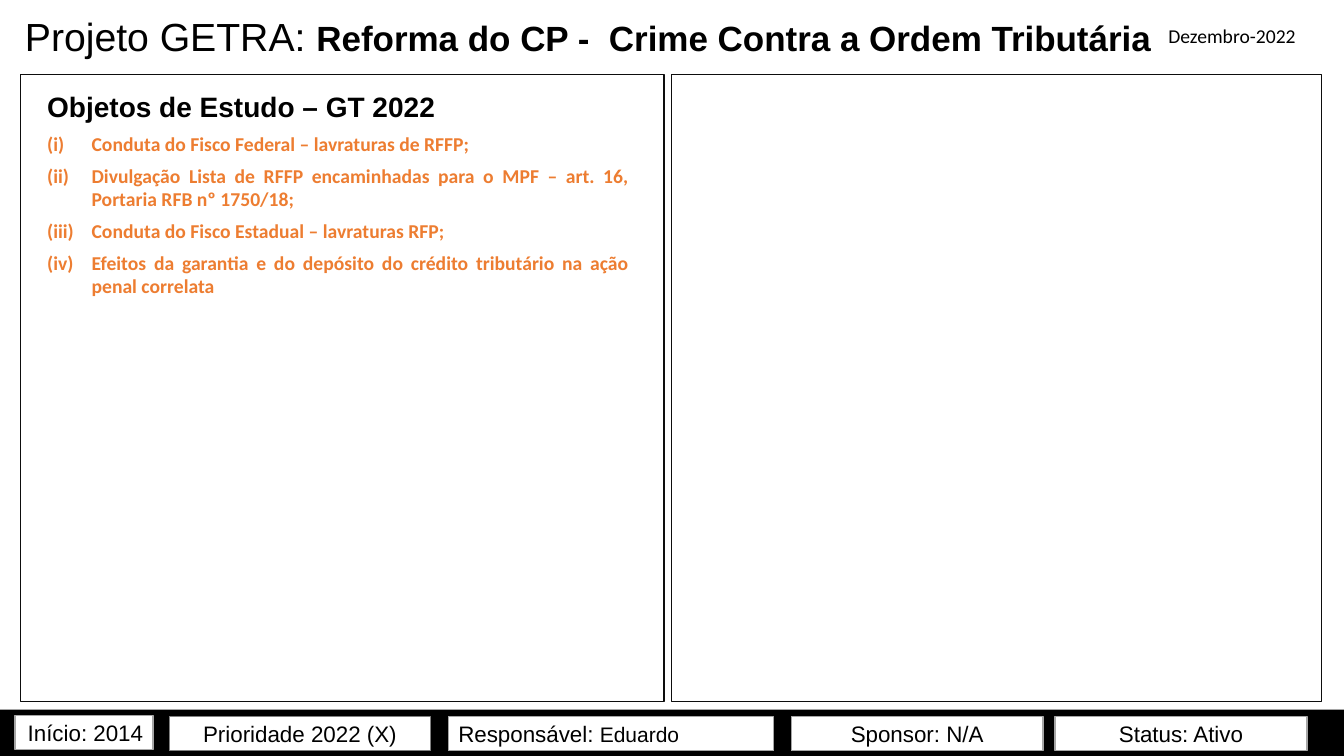
from dataclasses import dataclass

from lxml import etree
from pptx import Presentation
from pptx.dml.color import RGBColor
from pptx.enum.shapes import MSO_SHAPE
from pptx.enum.text import MSO_ANCHOR, PP_ALIGN
from pptx.oxml.ns import qn
from pptx.util import Cm, Length, Pt

RECT = MSO_SHAPE.RECTANGLE
TOP, MIDDLE, BOTTOM = MSO_ANCHOR.TOP, MSO_ANCHOR.MIDDLE, MSO_ANCHOR.BOTTOM
LEFT, CENTER, RIGHT = PP_ALIGN.LEFT, PP_ALIGN.CENTER, PP_ALIGN.RIGHT
JUSTIFY = PP_ALIGN.JUSTIFY


@dataclass(frozen=True)
class Theme:
    black: str = "000000"
    white: str = "FFFFFF"
    frame: str = "0D0D0D"
    dark: str = "808080"
    light: str = "A6A6A6"
    orange: str = "ED7D31"
    sans: str = "Arial"
    body: str = "Calibri"
    title: int = 28
    topic: int = 25
    head: int = 20
    label: int = 16
    name: int = 15
    text: int = 14


THEME = Theme()


@dataclass(frozen=True)
class Box:
    left: float
    top: float
    width: float
    height: float

    def spans(self) -> tuple[Length, ...]:
        return Cm(self.left), Cm(self.top), Cm(self.width), Cm(self.height)


@dataclass(frozen=True)
class Label:
    text: str
    left: float
    width: float
    top: float = 18.06
    line: str = THEME.light
    align: PP_ALIGN = CENTER
    name: str = ""


PANELS = (Box(0.51, 1.88, 16.23, 15.8), Box(16.92, 1.88, 16.38, 15.8))
AREAS = (Box(0.94, 2.13, 15.16, 14.83), Box(17.35, 2.08, 15.16, 14.83))
TOPICS = (
    "Conduta do Fisco Federal – lavraturas de RFFP;",
    "Divulgação Lista de RFFP encaminhadas para o MPF – art. 16, Portaria RFB nº 1750/18;",
    "Conduta do Fisco Estadual – lavraturas RFP;",
    "Efeitos da garantia e do depósito do crédito tributário na ação penal correlata",
)
LABELS = (
    Label("Início: 2014", 0.38, 3.48, top=18.03, align=RIGHT),
    Label("Prioridade 2022 (X)", 4.27, 6.58, line=THEME.dark),
    Label("Responsável: ", 11.3, 8.2, align=LEFT, name="Eduardo"),
    Label("Sponsor: N/A", 19.94, 6.35),
    Label("Status: Ativo", 26.59, 6.35),
)


def add_rect(slide, box: Box, fill: str = "", line: str = ""):
    shape = slide.shapes.add_shape(RECT, *box.spans())
    shape.shadow.inherit = False
    if fill:
        shape.fill.solid()
        shape.fill.fore_color.rgb = RGBColor.from_string(fill)
    else:
        shape.fill.background()
    if line:
        shape.line.color.rgb = RGBColor.from_string(line)
        shape.line.width = Pt(1)
    else:
        shape.line.fill.background()
    return shape


def set_frame(shape, anchor: MSO_ANCHOR):
    frame = shape.text_frame
    frame.word_wrap = True
    frame.vertical_anchor = anchor
    return frame


def add_text(para, text: str, *, size: int = THEME.label, font: str = THEME.sans,
             color: str = THEME.black, bold: bool = False,
             align: PP_ALIGN = LEFT, before: int = 0) -> None:
    para.alignment = align
    para.space_before = Pt(before)
    run = para.add_run()
    run.text = text
    run.font.size = Pt(size)
    run.font.name = font
    run.font.bold = bold
    run.font.color.rgb = RGBColor.from_string(color)


def add_number(para) -> None:
    props = para._p.get_or_add_pPr()
    props.set("marL", str(Cm(1.12)))
    props.set("indent", str(-Cm(1.12)))
    etree.SubElement(props, qn("a:buAutoNum"), type="romanLcParenBoth")


def add_header(slide) -> None:
    title = slide.shapes.add_textbox(*Box(0.38, 0.13, 29.21, 1.5).spans())
    para = set_frame(title, BOTTOM).paragraphs[0]
    para.line_spacing = 0.9
    add_text(para, "Projeto GETRA: ", size=THEME.title)
    add_text(para, "Reforma do CP -  Crime Contra a Ordem Tributária",
             size=THEME.topic, bold=True)
    date = slide.shapes.add_textbox(*Box(29.16, 0.38, 3.78, 1.04).spans())
    add_text(set_frame(date, MIDDLE).paragraphs[0], "Dezembro-2022",
             size=THEME.text, font=THEME.body, align=CENTER)


def add_topics(shape) -> None:
    frame = set_frame(shape, TOP)
    add_text(frame.paragraphs[0], "Objetos de Estudo – GT 2022",
             size=THEME.head, bold=True, align=JUSTIFY, before=6)
    for topic in TOPICS:
        para = frame.add_paragraph()
        add_text(para, topic, size=THEME.text, font=THEME.body, bold=True,
                 color=THEME.orange, align=JUSTIFY, before=6)
        add_number(para)


def add_label(slide, label: Label) -> None:
    box = Box(label.left, label.top, label.width, 0.86)
    shape = add_rect(slide, box, THEME.white, label.line)
    para = set_frame(shape, MIDDLE).paragraphs[0]
    add_text(para, label.text, align=label.align)
    if label.name:
        add_text(para, label.name, size=THEME.name, align=label.align)


def main() -> None:
    deck = Presentation()
    deck.slide_width, deck.slide_height = Cm(33.87), Cm(19.05)
    slide = deck.slides.add_slide(deck.slide_layouts[6])

    # Title and date
    add_header(slide)

    # Two framed panels with their content areas
    for panel in PANELS:
        add_rect(slide, panel, line=THEME.frame)
    areas = [add_rect(slide, area, THEME.white) for area in AREAS]
    add_topics(areas[0])

    # Footer band with labels
    add_rect(slide, Box(0, 17.88, 33.87, 1.17), THEME.black)
    for label in LABELS:
        add_label(slide, label)

    deck.save("out.pptx")


if __name__ == "__main__":
    main()
